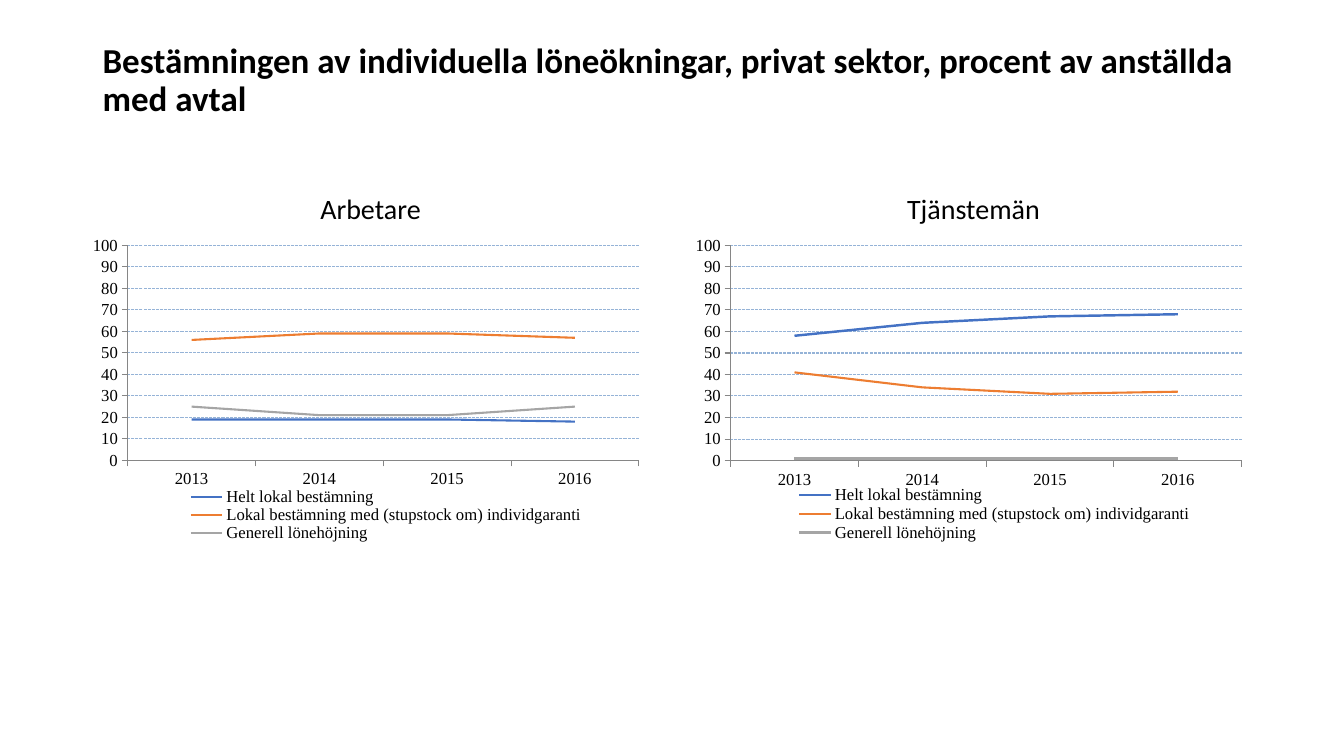
from pptx import Presentation
from pptx.chart.data import CategoryChartData
from pptx.dml.color import RGBColor
from pptx.enum.chart import XL_CHART_TYPE, XL_LEGEND_POSITION, XL_TICK_LABEL_POSITION, XL_TICK_MARK
from pptx.enum.dml import MSO_LINE
from pptx.enum.text import MSO_ANCHOR, PP_ALIGN
from pptx.oxml import parse_xml
from pptx.oxml.ns import nsdecls, qn
from pptx.util import Pt

LINE_CHART = XL_CHART_TYPE.LINE
BOTTOM = XL_LEGEND_POSITION.BOTTOM
LOW = XL_TICK_LABEL_POSITION.LOW
OUTSIDE, NO_TICK = XL_TICK_MARK.OUTSIDE, XL_TICK_MARK.NONE
DASH = MSO_LINE.SQUARE_DOT
MIDDLE = MSO_ANCHOR.MIDDLE
LEFT, CENTER = PP_ALIGN.LEFT, PP_ALIGN.CENTER

BLACK = RGBColor(0x00, 0x00, 0x00)
AXIS_GREY = RGBColor(0x86, 0x86, 0x86)
GRID_BLUE = RGBColor(0x95, 0xB3, 0xD7)
BLUE = RGBColor(0x44, 0x72, 0xC4)
ORANGE = RGBColor(0xED, 0x7D, 0x31)
GREY = RGBColor(0xA5, 0xA5, 0xA5)

EMU_PER_PX = 9144  # 100 px to the inch
YEARS = ["2013", "2014", "2015", "2016"]
SERIES = [
    ("Helt lokal bestämning", BLUE),
    ("Lokal bestämning med (stupstock om) individgaranti", ORANGE),
    ("Generell lönehöjning", GREY),
]
PANELS = [
    {"left": 92, "heading": "Arbetare", "legend": (0.15, 0.83, 0.75, 0.18),
     "values": [(19, 19, 19, 18), (56, 59, 59, 57), (25, 21, 21, 25)],
     "widths": (1.5, 1.5, 1.5)},
    {"left": 690, "heading": "Tjänstemän", "legend": (0.16, 0.82, 0.75, 0.18),
     "values": [(58, 64, 67, 68), (41, 34, 31, 32), (1, 1, 1, 1)],
     "widths": (1.75, 1.5, 2.25)},
]
PANEL_WIDTH = 551
PLOT = (0.057, 0.065, 0.926, 0.678)


def px(*lengths):
    return [length * EMU_PER_PX for length in lengths]


def apply(target, formats):
    for name, value in formats.items():
        setattr(target, name, value)


def place(parent, index, fractions, inner=False):
    """Give a chart part a manual layout in fractions of the chart."""
    for old in parent.findall(qn("c:layout")):
        parent.remove(old)
    target = '<c:layoutTarget val="inner"/>' if inner else ""
    modes = "".join(f'<c:{side}Mode val="edge"/>' for side in "xy")
    sizes = "".join(f'<c:{key} val="{value}"/>' for key, value in zip("xywh", fractions))
    parent.insert(index, parse_xml(
        f'<c:layout {nsdecls("c")}><c:manualLayout>{target}{modes}{sizes}'
        '</c:manualLayout></c:layout>'))


class SlideBuilder:
    def __init__(self, page):
        self.page = page
        self.text_font = "Calibri"
        self.chart_font = "Times New Roman"

    def text(self, words, bounds, size, align=LEFT, bold=False):
        box = self.page.shapes.add_textbox(*px(*bounds))
        apply(box.text_frame, {"word_wrap": True, "vertical_anchor": MIDDLE})
        para = box.text_frame.paragraphs[0]
        apply(para, {"alignment": align, "line_spacing": 0.9})
        span = para.add_run()
        span.text = words
        apply(span.font, {"name": self.text_font, "size": Pt(size), "bold": bold})
        span.font.color.rgb = BLACK

    def line(self, line_format, color, width):
        line_format.color.rgb = color
        line_format.width = Pt(width)

    def chart(self, bounds, values, widths, legend_layout):
        chart_data = CategoryChartData()
        chart_data.categories = YEARS
        for (name, _), numbers in zip(SERIES, values):
            chart_data.add_series(name, numbers)
        chart = self.page.shapes.add_chart(LINE_CHART, *px(*bounds), chart_data).chart
        apply(chart, {"has_title": False, "has_legend": True})
        apply(chart.font, {"name": self.chart_font, "size": Pt(12)})
        chart.font.color.rgb = BLACK
        apply(chart.legend, {"position": BOTTOM, "include_in_layout": False})
        chart.plots[0].vary_by_categories = False
        for series, (_, color), width in zip(chart.plots[0].series, SERIES, widths):
            series.smooth = False
            self.line(series.format.line, color, width)
        self.axes(chart)
        plot_area = chart.element.find(".//" + qn("c:plotArea"))
        place(plot_area, 0, PLOT, inner=True)
        place(chart.element.find(".//" + qn("c:legend")), 1, legend_layout)

    def axes(self, chart):
        for axis in (chart.category_axis, chart.value_axis):
            apply(axis, {"major_tick_mark": OUTSIDE, "minor_tick_mark": NO_TICK})
            self.line(axis.format.line, AXIS_GREY, 0.75)
        chart.category_axis.tick_label_position = LOW
        apply(chart.value_axis, {"minimum_scale": 0, "maximum_scale": 100,
                                 "major_unit": 10, "has_major_gridlines": True})
        grid = chart.value_axis.major_gridlines.format.line
        self.line(grid, GRID_BLUE, 0.75)
        grid.dash_style = DASH


def main():
    deck = Presentation()
    deck.slide_width, deck.slide_height = px(1333, 750)
    builder = SlideBuilder(deck.slides.add_slide(deck.slide_layouts[6]))
    builder.text("Bestämningen av individuella löneökningar, privat sektor, "
                 "procent av anställda med avtal", (92, 40, 1150, 81), 25, bold=True)
    for panel in PANELS:
        left = panel["left"]
        builder.text(panel["heading"], (left, 182, PANEL_WIDTH, 53), 20, CENTER)
        builder.chart((left, 223, PANEL_WIDTH, 315), panel["values"],
                      panel["widths"], panel["legend"])
    deck.save("out.pptx")


if __name__ == "__main__":
    main()
